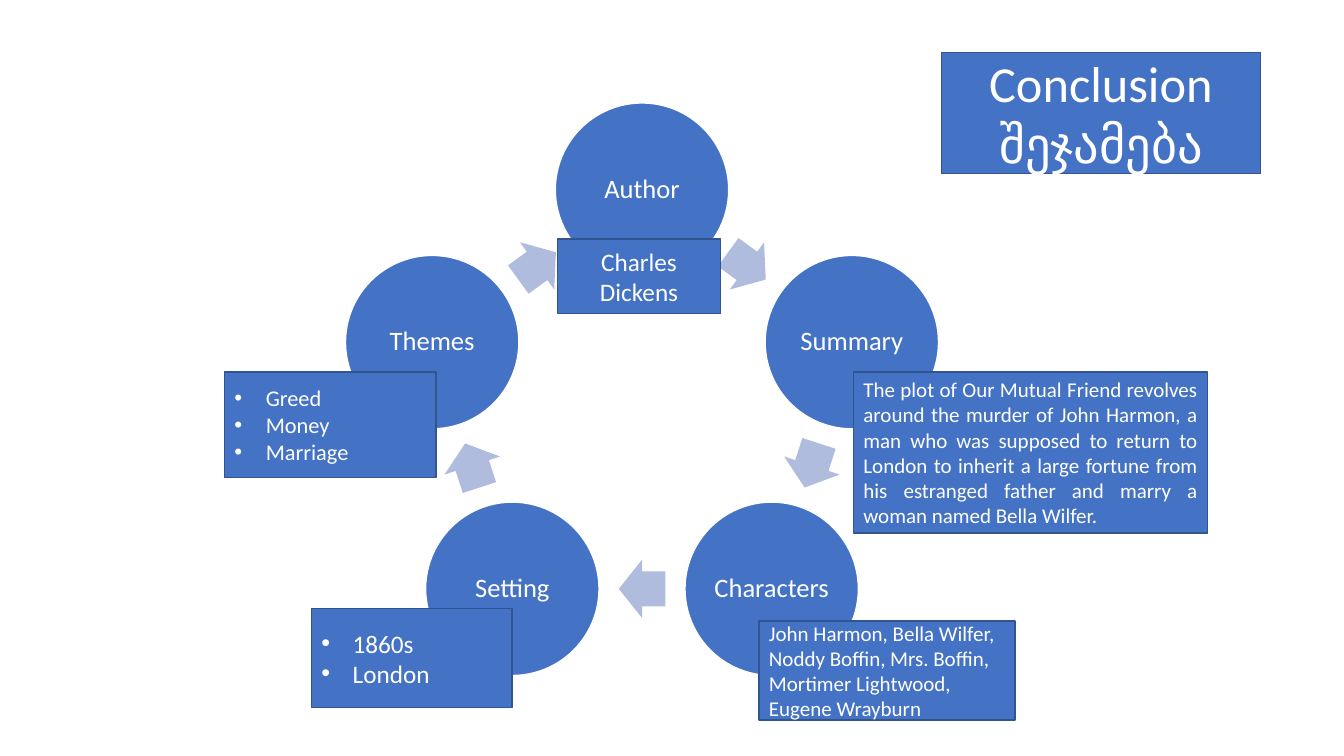
from dataclasses import dataclass
from math import cos, radians, sin

from lxml.etree import SubElement
from pptx import Presentation
from pptx.dml.color import RGBColor as RGB
from pptx.enum.shapes import MSO_SHAPE as Shape
from pptx.enum.text import MSO_ANCHOR as Anchor
from pptx.enum.text import MSO_AUTO_SIZE as Fit
from pptx.enum.text import PP_ALIGN as Align
from pptx.oxml.ns import qn
from pptx.util import Cm, Pt


@dataclass(frozen=True)
class Theme:
    font: str = "Calibri"
    blue: RGB = RGB.from_string("4472C4")
    edge: RGB = RGB.from_string("325491")
    pale: RGB = RGB.from_string("B0BCDE")
    white: RGB = RGB.from_string("FFFFFF")
    title: int = 36
    node: int = 19
    large: int = 18
    list: int = 16
    small: int = 15


THEME = Theme()

# Ring of topics: centre, radius and sizes in cm
MID_X, MID_Y, RADIUS = 16.18, 10.34, 5.56
DISC = 4.37
ARROW_W, ARROW_H = 1.17, 1.47
TOPICS = ["Author", "Summary", "Characters", "Setting", "Themes"]

PLOT = (
    "The plot of Our Mutual Friend revolves around the murder of John Harmon, "
    "a man who was supposed to return to London to inherit a large fortune "
    "from his estranged father and marry a woman named Bella Wilfer."
)
CAST = (
    "John Harmon, Bella Wilfer, Noddy Boffin, Mrs. Boffin, "
    "Mortimer Lightwood, Eugene Wrayburn"
)


def place(shape, left, top, width, height):
    shape.left, shape.top = Cm(left), Cm(top)
    shape.width, shape.height = Cm(width), Cm(height)


def paint(shape, fill, line=None):
    shape.fill.solid()
    shape.fill.fore_color.rgb = fill
    if line is None:
        shape.line.fill.background()
    else:
        shape.line.color.rgb = line
        shape.line.width = Pt(1)


def add_bullet(para):
    props = para._p.get_or_add_pPr()
    props.set("marL", str(Cm(0.79)))
    props.set("indent", str(-Cm(0.79)))
    SubElement(props, qn("a:buFont")).set("typeface", "Arial")
    SubElement(props, qn("a:buChar")).set("char", "•")


def add_run(para, text, size):
    run = para.add_run()
    run.text = text
    run.font.name = THEME.font
    run.font.size = Pt(size)
    run.font.color.rgb = THEME.white


def write(shape, lines, size, align=Align.CENTER, bullets=False):
    frame = shape.text_frame
    frame.word_wrap = True
    frame.auto_size = Fit.NONE
    frame.vertical_anchor = Anchor.MIDDLE
    for i, line in enumerate(lines):
        para = frame.add_paragraph() if i else frame.paragraphs[0]
        para.alignment = align
        if bullets:
            add_bullet(para)
        add_run(para, line, size)


def add_title(slide, first, second):
    title = slide.shapes.title
    place(title, 23.72, 1.32, 8.05, 3.05)
    paint(title, THEME.blue, THEME.edge)
    write(title, [first], THEME.title)
    para = title.text_frame.paragraphs[0]
    para.line_spacing = 1.0
    para.add_line_break()
    add_run(para, second, THEME.title)


def add_form(slide, kind, box, fill, line=None):
    shape = slide.shapes.add_shape(kind, *map(Cm, box))
    shape.shadow.inherit = False
    paint(shape, fill, line)
    return shape


def add_note(slide, box, lines, size, align=Align.LEFT, bullets=False):
    note = add_form(slide, Shape.RECTANGLE, box, THEME.blue, THEME.edge)
    write(note, lines, size, align, bullets)


def centred(angle, radius, width, height):
    """Box whose centre lies on the ring, clockwise from the top."""
    x = MID_X + radius * sin(radians(angle))
    y = MID_Y - radius * cos(radians(angle))
    return x - width / 2, y - height / 2, width, height


def add_ring(slide, topics):
    step = 360 / len(topics)
    inner = RADIUS * cos(radians(step / 2))
    for i, topic in enumerate(topics):
        angle = i * step
        box = centred(angle, RADIUS, DISC, DISC)
        disc = add_form(slide, Shape.OVAL, box, THEME.blue, THEME.white)
        frame = disc.text_frame
        frame.margin_left = frame.margin_right = Cm(0.08)
        frame.margin_top = frame.margin_bottom = Cm(0.08)
        write(disc, [topic], THEME.node)
        frame.paragraphs[0].line_spacing = 0.9

        turn = angle + step / 2
        box = centred(turn, inner, ARROW_W, ARROW_H)
        arrow = add_form(slide, Shape.RIGHT_ARROW, box, THEME.pale)
        arrow.adjustments[0] = 0.6
        arrow.adjustments[1] = 0.5
        arrow.rotation = turn


def main():
    deck = Presentation()
    deck.slide_width, deck.slide_height = Cm(33.87), Cm(19.05)
    slide = deck.slides.add_slide(deck.slide_layouts[5])

    add_title(slide, "Conclusion", "შეჯამება")
    add_ring(slide, TOPICS)
    add_note(slide, (14.05, 6.02, 4.11, 1.88), ["Charles Dickens"],
             THEME.large, Align.CENTER)
    add_note(slide, (5.66, 9.37, 5.33, 2.67), ["Greed", "Money", "Marriage"],
             THEME.list, bullets=True)
    add_note(slide, (7.85, 15.34, 5.05, 2.49), ["1860s", "London"],
             THEME.large, bullets=True)
    add_note(slide, (19.13, 15.65, 6.45, 2.49), [CAST], THEME.small)
    add_note(slide, (21.51, 9.37, 8.92, 4.06), [PLOT], THEME.small,
             Align.JUSTIFY)
    deck.save("out.pptx")


if __name__ == "__main__":
    main()
